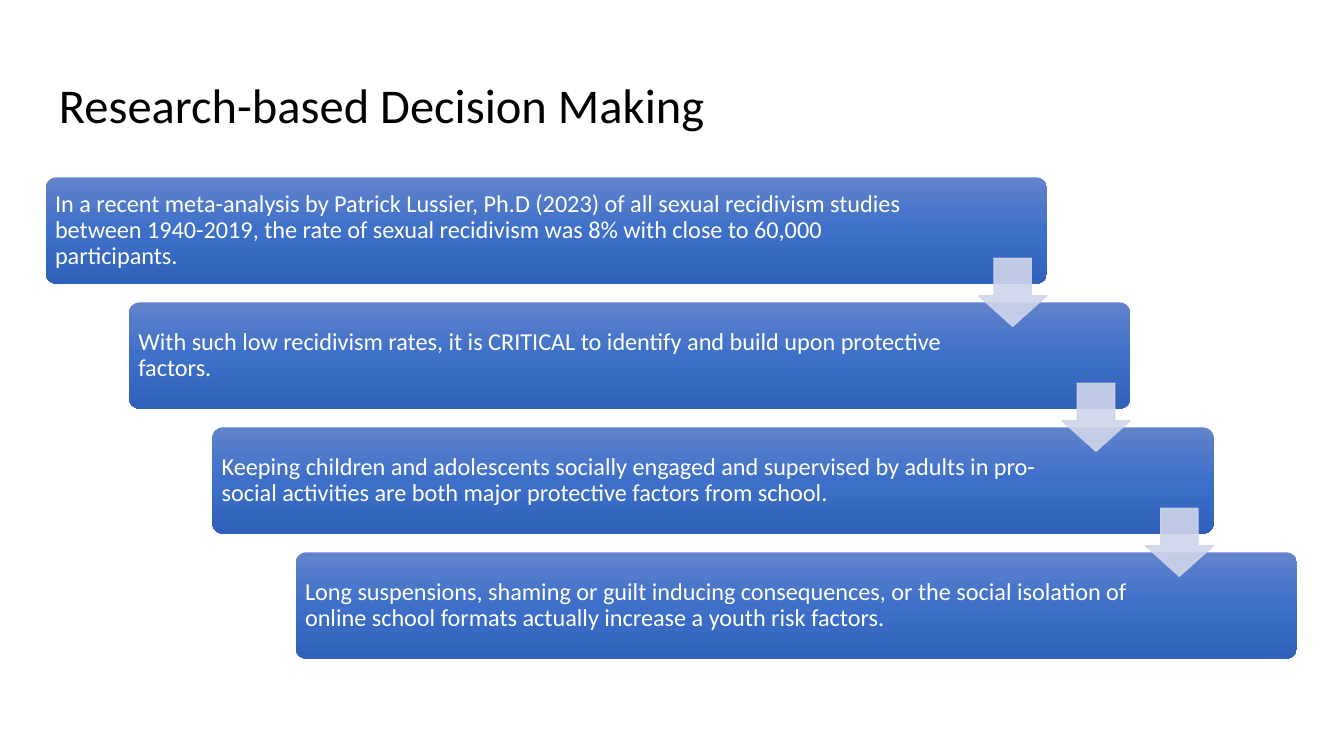
from copy import deepcopy
from dataclasses import dataclass

from lxml import etree
from pptx import Presentation
from pptx.dml.color import RGBColor
from pptx.enum.shapes import MSO_SHAPE
from pptx.enum.text import MSO_ANCHOR, PP_ALIGN
from pptx.oxml.ns import qn
from pptx.util import Pt

ROUNDED = MSO_SHAPE.ROUNDED_RECTANGLE
DOWN_ARROW = MSO_SHAPE.DOWN_ARROW
MIDDLE = MSO_ANCHOR.MIDDLE
LEFT = PP_ALIGN.LEFT

EMU_PER_PX = 4572  # 200 px to the inch
SLIDE_WIDTH, SLIDE_HEIGHT = 2000, 1125
BLANK_LAYOUT = 6

CARD_LEFT, CARD_TOP = 68, 264
CARD_WIDTH, CARD_HEIGHT = 1490, 158
STEP_X, STEP_Y = 124, 186
CARD_INSET = 4
ARROW_SIZE = 102
ARROW_DROP = 120

FINDINGS = [
    ("In a recent meta-analysis by Patrick Lussier, Ph.D (2023) of all sexual "
     "recidivism studies between 1940-2019, the rate of sexual recidivism was 8% "
     "with close to 60,000 participants.", 1308),
    ("With such low recidivism rates, it is CRITICAL to identify and build upon "
     "protective factors.", 1254),
    ("Keeping children and adolescents socially engaged and supervised by adults "
     "in pro-social activities are both major protective factors from school.", 1254),
    ("Long suspensions, shaming or guilt inducing consequences, or the social "
     "isolation of online school formats actually increase a youth risk factors.", 1254),
]


@dataclass(frozen=True)
class Theme:
    font: str = "Calibri"
    title_size: int = 26
    body_size: int = 13
    title_color: str = "000000"
    body_color: str = "FFFFFF"
    card_gradient: tuple = ("6183CB", "3E70CA", "3062BB")
    arrow_color: str = "CFD5EA"
    arrow_opacity: int = 90
    arrow_line: float = 0.5


def px(length):
    return length * EMU_PER_PX


class SlideBuilder:
    def __init__(self, slide, theme):
        self.shapes = slide.shapes
        self.theme = theme

    def text(self, words, left, top, width, height, size, color, inset):
        box = self.shapes.add_textbox(px(left), px(top), px(width), px(height))
        frame = box.text_frame
        frame.word_wrap = True
        frame.vertical_anchor = MIDDLE
        frame.margin_left = frame.margin_right = px(inset)
        frame.margin_top = frame.margin_bottom = px(inset)
        paragraph = frame.paragraphs[0]
        paragraph.text = words
        paragraph.alignment = LEFT
        paragraph.line_spacing = 0.9
        paragraph.font.name = self.theme.font
        paragraph.font.size = Pt(size)
        paragraph.font.color.rgb = RGBColor.from_string(color)

    def card(self, left, top):
        card = self.shapes.add_shape(
            ROUNDED, px(left), px(top), px(CARD_WIDTH), px(CARD_HEIGHT))
        card.shadow.inherit = False
        card.adjustments[0] = 0.1
        card.line.fill.background()
        card.fill.gradient()
        card.fill.gradient_angle = 270
        stop_list = next(card.element.iter(qn("a:gsLst")))
        stop_list.insert(1, deepcopy(stop_list[0]))
        for index, color in enumerate(self.theme.card_gradient):
            stop = card.fill.gradient_stops[index]
            stop.position = index / 2
            stop.color.rgb = RGBColor.from_string(color)

    def arrow(self, left, top):
        arrow = self.shapes.add_shape(
            DOWN_ARROW, px(left), px(top), px(ARROW_SIZE), px(ARROW_SIZE))
        arrow.shadow.inherit = False
        arrow.adjustments[0] = 0.55
        arrow.adjustments[1] = 0.45
        arrow.line.width = Pt(self.theme.arrow_line)
        for fill in (arrow.fill, arrow.line.fill):
            fill.solid()
            fill.fore_color.rgb = RGBColor.from_string(self.theme.arrow_color)
        for color in arrow.element.spPr.iter(qn("a:srgbClr")):
            alpha = etree.SubElement(color, qn("a:alpha"))
            alpha.set("val", str(self.theme.arrow_opacity * 1000))


def main():
    presentation = Presentation()
    presentation.slide_width = px(SLIDE_WIDTH)
    presentation.slide_height = px(SLIDE_HEIGHT)
    slide = presentation.slides.add_slide(presentation.slide_layouts[BLANK_LAYOUT])
    theme = Theme()
    builder = SlideBuilder(slide, theme)

    builder.text("Research-based Decision Making", 68, 98, 1864, 126,
                 theme.title_size, theme.title_color, inset=20)

    steps = [(CARD_LEFT + i * STEP_X, CARD_TOP + i * STEP_Y)
             for i in range(len(FINDINGS))]
    for (left, top), (finding, text_width) in zip(steps, FINDINGS):
        builder.card(left, top)
        builder.text(finding, left + CARD_INSET, top + CARD_INSET, text_width,
                     CARD_HEIGHT - 2 * CARD_INSET, theme.body_size,
                     theme.body_color, inset=10)
    for left, top in steps[:-1]:
        builder.arrow(left + CARD_WIDTH - ARROW_SIZE, top + ARROW_DROP)

    presentation.save("out.pptx")


if __name__ == "__main__":
    main()
